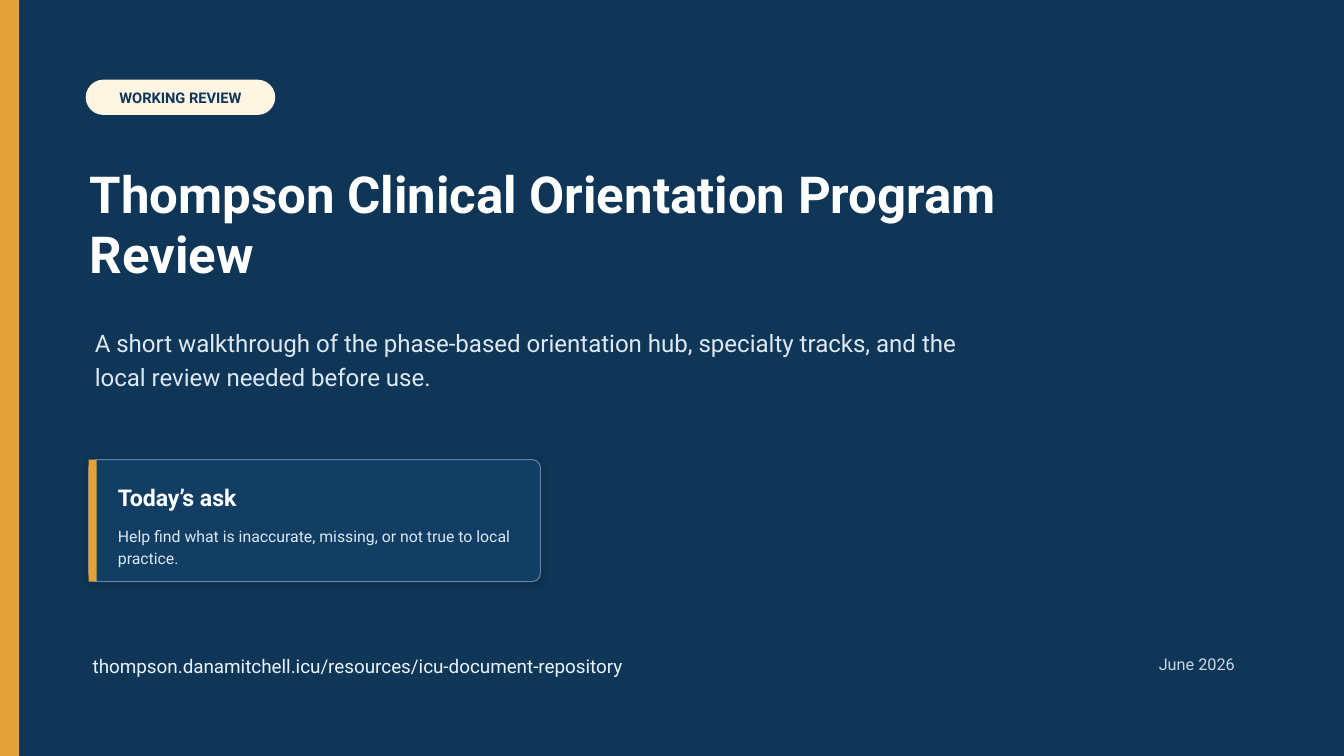
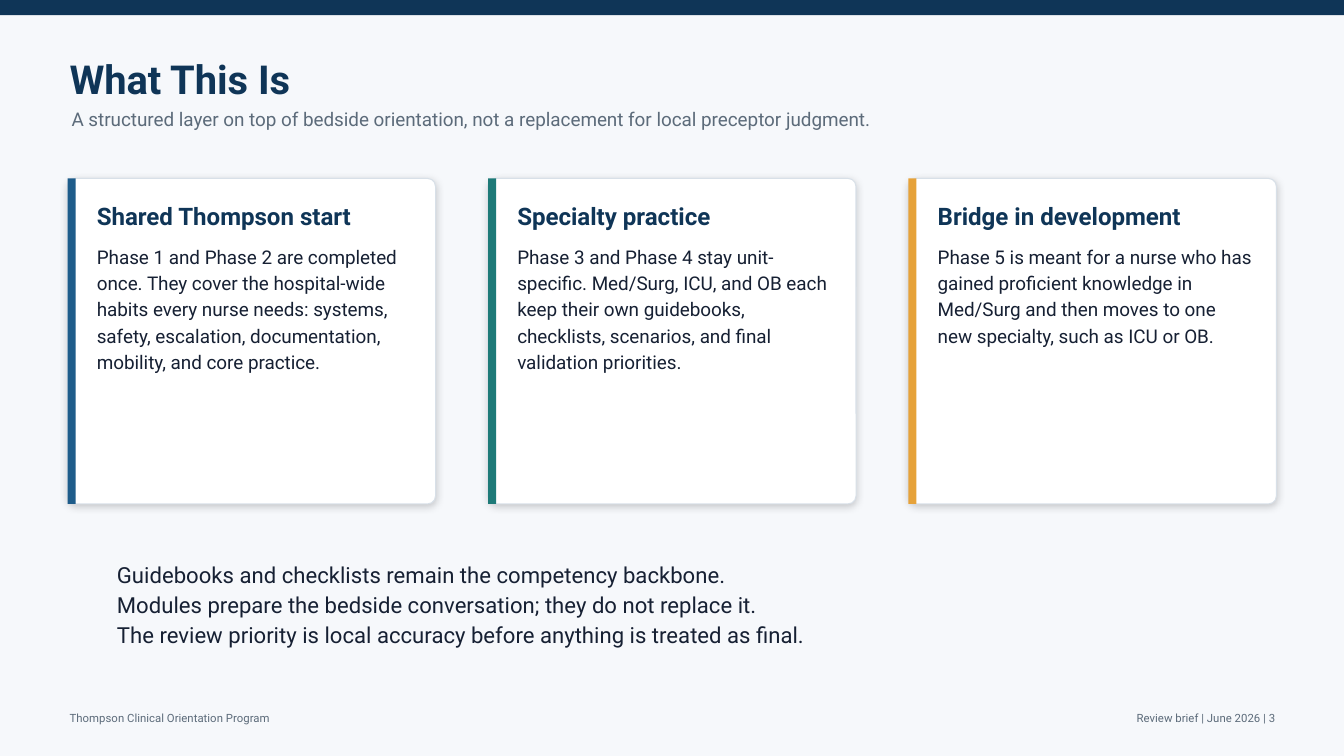
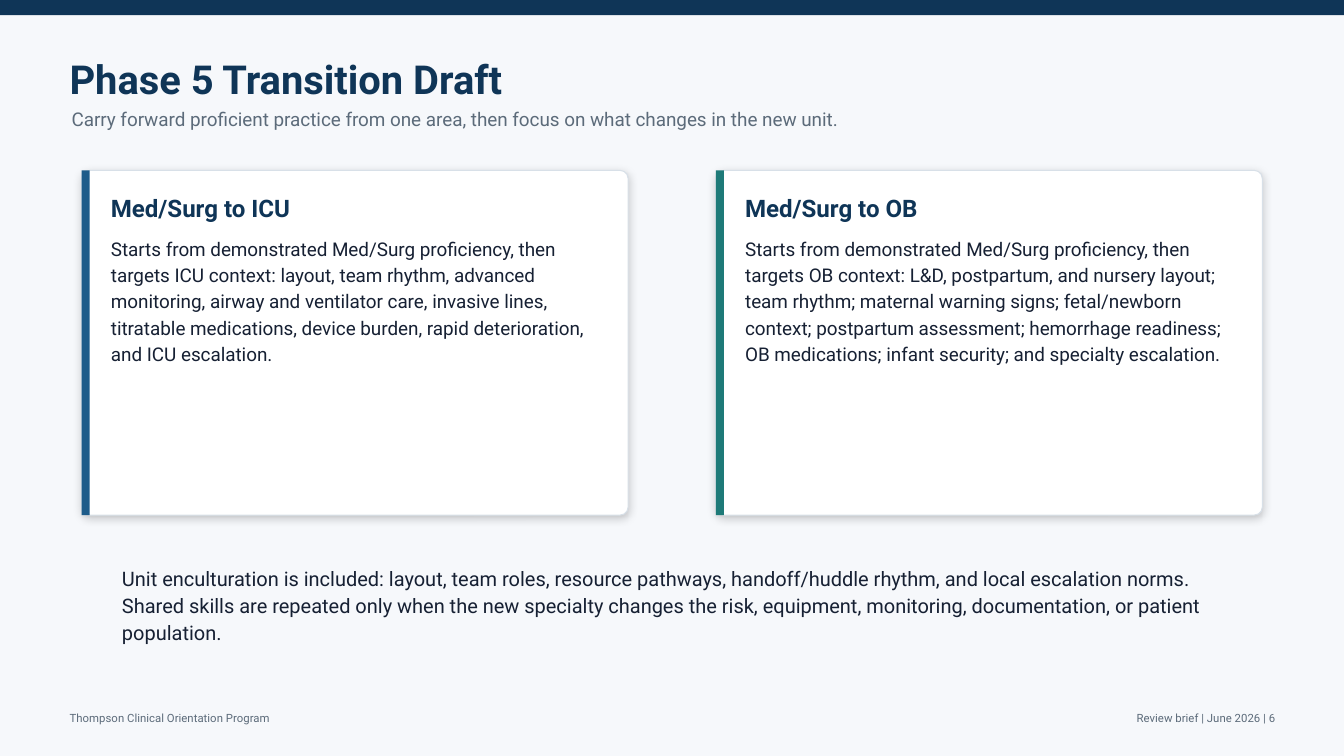
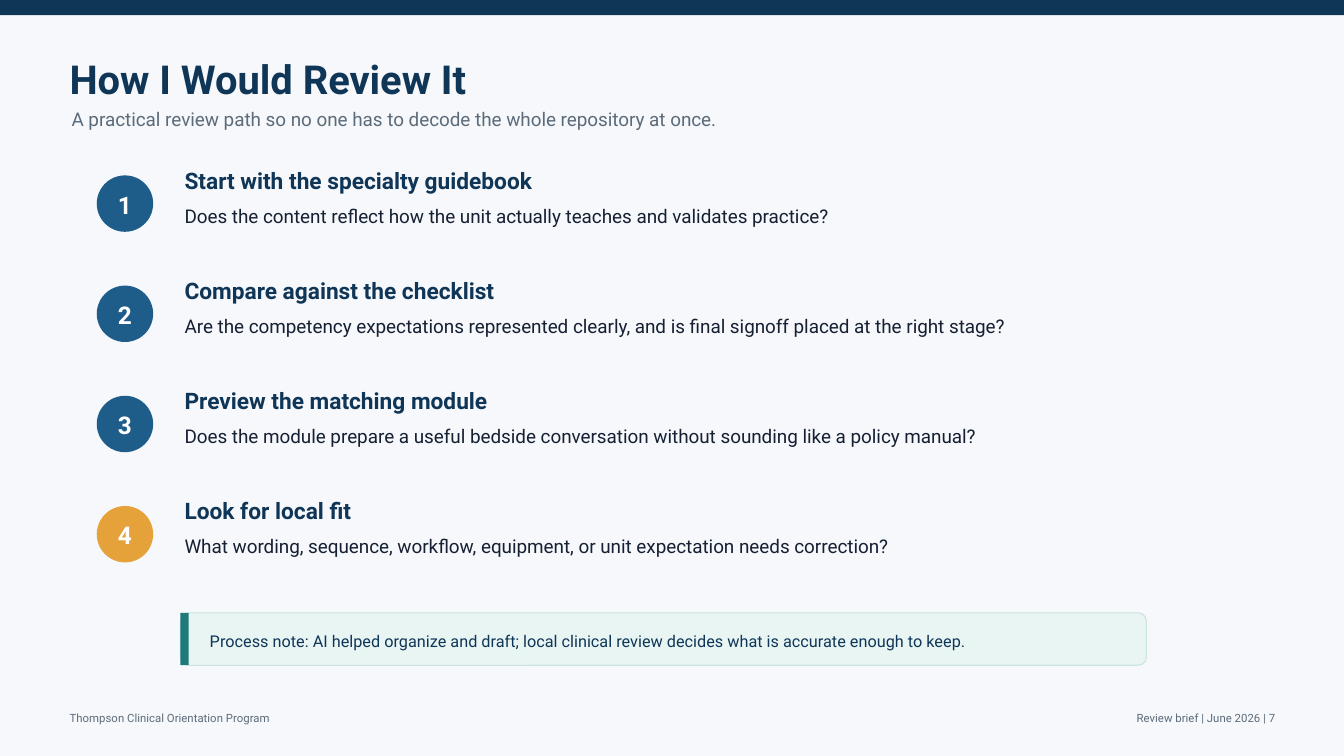
"""Build the four slides of the orientation program review."""
from lxml import etree
from pptx import Presentation
from pptx import util as u
from pptx.dml.color import RGBColor
from pptx.enum import shapes, text
from pptx.oxml.ns import qn

HUES = {
    "navy": "0F3557", "gold": "E6A23A", "blue": "1E5C8A", "teal": "1E7A78",
    "cream": "FFF5E3", "white": "FFFFFF", "paper": "F6F8FB", "ink": "162033",
    "grey": "5C6B7A", "edge": "D8E0E8", "panel": "123E64", "steel": "5E83A4",
    "mist": "DCE8F2", "ice": "E8F3FB", "haze": "C6D7E4",
    "mint": "E8F5F3", "sage": "CBE3DF",
}
FONT = "Roboto"
WIDE, HIGH = 13.33, 7.5
CURVE = 0.08
RECT = shapes.MSO_SHAPE.RECTANGLE
ROUND = shapes.MSO_SHAPE.ROUNDED_RECTANGLE
OVAL = shapes.MSO_SHAPE.OVAL
LEFT, MID, RIGHT = text.PP_ALIGN.LEFT, text.PP_ALIGN.CENTER, text.PP_ALIGN.RIGHT


def put(slide, words, x, y, w, h, size=13.5, hue="ink", bold=False, align=LEFT, lead=1.08):
    frame = slide.shapes.add_textbox(*map(u.Inches, (x, y, w, h))).text_frame
    frame.word_wrap = True
    frame.margin_left = frame.margin_right = u.Inches(0.04)
    frame.margin_top = frame.margin_bottom = u.Inches(0.02)
    frame.text = words
    for para in frame.paragraphs:
        para.alignment, para.line_spacing = align, lead
        for run in para.runs:
            run.font.name, run.font.size, run.font.bold = FONT, u.Pt(size), bold
            run.font.color.rgb = RGBColor.from_string(HUES[hue])


def box(slide, kind, x, y, w, h, fill, line=None, curve=CURVE, stripe=None, shade=False):
    shape = slide.shapes.add_shape(kind, *map(u.Inches, (x, y, w, h)))
    shape.shadow.inherit = False
    shape.fill.solid()
    shape.fill.fore_color.rgb = RGBColor.from_string(HUES[fill])
    shape.line.fill.background()
    if line:
        shape.line.color.rgb = RGBColor.from_string(HUES[line])
        shape.line.width = u.Pt(0.75)
    if kind == ROUND:
        shape.adjustments[0] = curve / min(w, h)
    if shade:
        cast = etree.SubElement(
            shape.element.spPr.find(qn("a:effectLst")), qn("a:outerShdw"),
            blurRad=str(u.Pt(6)), dist=str(u.Pt(1.5)), dir="5400000", rotWithShape="0")
        tint = etree.SubElement(cast, qn("a:srgbClr"), val="000000")
        etree.SubElement(tint, qn("a:alpha"), val="20000")
    if stripe:
        box(slide, RECT, x, y, 0.08, h, stripe)


deck = Presentation()
deck.slide_width, deck.slide_height = u.Inches(WIDE), u.Inches(HIGH)
pages = []
for back in ("navy", "paper", "paper", "paper"):
    page = deck.slides.add_slide(deck.slide_layouts[6])
    page.background.fill.solid()
    page.background.fill.fore_color.rgb = RGBColor.from_string(HUES[back])
    pages.append(page)
cover, about, draft, review = pages

heads = [
    (about, 3, "What This Is",
     "A structured layer on top of bedside orientation, not a replacement for local preceptor judgment."),
    (draft, 6, "Phase 5 Transition Draft",
     "Carry forward proficient practice from one area, then focus on what changes in the new unit."),
    (review, 7, "How I Would Review It",
     "A practical review path so no one has to decode the whole repository at once."),
]
for page, num, title, lede in heads:
    box(page, RECT, 0, 0, WIDE, 0.15, "navy")
    put(page, title, 0.65, 0.48, 8.96, 0.56, size=28.5, hue="navy", bold=True)
    put(page, lede, 0.67, 1.03, 9.9, 0.35, hue="grey")
    put(page, "Thompson Clinical Orientation Program", 0.65, 7.02, 3.75, 0.19, size=8.1, hue="grey")
    put(page, f"Review brief | June 2026 | {num}", 9.98, 7.02, 2.71, 0.19,
        size=8.1, hue="grey", align=RIGHT)

box(cover, RECT, 0, 0, 0.19, HIGH, "gold")
box(cover, ROUND, 0.85, 0.79, 1.88, 0.35, "cream", curve=0.18)
put(cover, "WORKING REVIEW", 0.98, 0.85, 1.62, 0.25, size=10.5, hue="navy", bold=True, align=MID)
put(cover, "Thompson Clinical Orientation Program Review", 0.85, 1.62, 9.48, 1.23,
    size=36.4, hue="white", bold=True, lead=0.98)
put(cover, "A short walkthrough of the phase-based orientation hub, specialty tracks, "
    "and the local review needed before use.", 0.9, 3.19, 8.7, 0.83, size=17.2, hue="mist", lead=1.18)
put(cover, "thompson.danamitchell.icu/resources/icu-document-repository",
    0.88, 6.46, 7.5, 0.29, hue="ice")
put(cover, "June 2026", 10.73, 6.46, 1.56, 0.25, size=11.6, hue="haze", align=RIGHT)

dark = dict(fill="panel", line="steel"), dict(size=16.5, hue="white"), dict(size=11.3, hue="mist")
light = dict(fill="white", line="edge"), dict(size=17.2, hue="navy"), dict(size=13.5, hue="ink")
rows = [
    (cover, 0.88, 4.56, 4.48, 1.21, dark, [
        ("gold", "Today’s ask",
         "Help find what is inaccurate, missing, or not true to local practice."),
    ]),
    (about, 0.67, 1.77, 3.65, 3.23, light, [
        ("blue", "Shared Thompson start",
         "Phase 1 and Phase 2 are completed once. They cover the hospital-wide habits every nurse "
         "needs: systems, safety, escalation, documentation, mobility, and core practice."),
        ("teal", "Specialty practice",
         "Phase 3 and Phase 4 stay unit-specific. Med/Surg, ICU, and OB each keep their own "
         "guidebooks, checklists, scenarios, and final validation priorities."),
        ("gold", "Bridge in development",
         "Phase 5 is meant for a nurse who has gained proficient knowledge in Med/Surg and then "
         "moves to one new specialty, such as ICU or OB."),
    ]),
    (draft, 0.81, 1.69, 5.42, 3.42, light, [
        ("blue", "Med/Surg to ICU",
         "Starts from demonstrated Med/Surg proficiency, then targets ICU context: layout, team "
         "rhythm, advanced monitoring, airway and ventilator care, invasive lines, titratable "
         "medications, device burden, rapid deterioration, and ICU escalation."),
        ("teal", "Med/Surg to OB",
         "Starts from demonstrated Med/Surg proficiency, then targets OB context: L&D, postpartum, "
         "and nursery layout; team rhythm; maternal warning signs; fetal/newborn context; postpartum "
         "assessment; hemorrhage readiness; OB medications; infant security; and specialty escalation."),
    ]),
]
for page, left, y, w, h, (skin, top, main), cards in rows:
    step = (WIDE - 2 * left - w) / max(len(cards) - 1, 1)
    for i, (hue, title, body) in enumerate(cards):
        x = left + i * step
        box(page, ROUND, x, y, w, h, stripe=hue, shade=True, **skin)
        put(page, title, x + 0.25, y + 0.19, w - 0.44, 0.35, bold=True, **top)
        put(page, body, x + 0.25, y + 0.61, w - 0.44, h - 0.73, lead=1.16, **main)

put(about, "Guidebooks and checklists remain the competency backbone.\n"
    "Modules prepare the bedside conversation; they do not replace it.\n"
    "The review priority is local accuracy before anything is treated as final.",
    1.12, 5.52, 10.57, 1.09, size=15.8, lead=1.12)
put(draft, "Unit enculturation is included: layout, team roles, resource pathways, "
    "handoff/huddle rhythm, and local escalation norms.\n"
    "Shared skills are repeated only when the new specialty changes the risk, equipment, "
    "monitoring, documentation, or patient population.",
    1.17, 5.57, 10.83, 0.94, size=14.3, lead=1.12)

steps = [
    ("blue", "Start with the specialty guidebook",
     "Does the content reflect how the unit actually teaches and validates practice?"),
    ("blue", "Compare against the checklist",
     "Are the competency expectations represented clearly, and is final signoff placed at the right stage?"),
    ("blue", "Preview the matching module",
     "Does the module prepare a useful bedside conversation without sounding like a policy manual?"),
    ("gold", "Look for local fit",
     "What wording, sequence, workflow, equipment, or unit expectation needs correction?"),
]
first, last = 1.74, 5.02
for i, (hue, title, ask) in enumerate(steps):
    y = first + i * (last - first) / (len(steps) - 1)
    box(review, OVAL, 0.96, y, 0.56, 0.56, hue)
    put(review, str(i + 1), 0.96, y + 0.1, 0.56, 0.35, size=17.4, hue="white", bold=True, align=MID)
    put(review, title, 1.79, y - 0.13, 4.58, 0.33, size=16.2, hue="navy", bold=True)
    put(review, ask, 1.79, y + 0.24, 8.75, 0.44, lead=1.12)

box(review, ROUND, 1.79, 6.08, 9.58, 0.52, "mint", line="sage", stripe="teal")
put(review, "Process note: AI helped organize and draft; local clinical review decides "
    "what is accurate enough to keep.", 2.04, 6.23, 8.85, 0.25, size=11.6, hue="navy")

deck.save("out.pptx")
